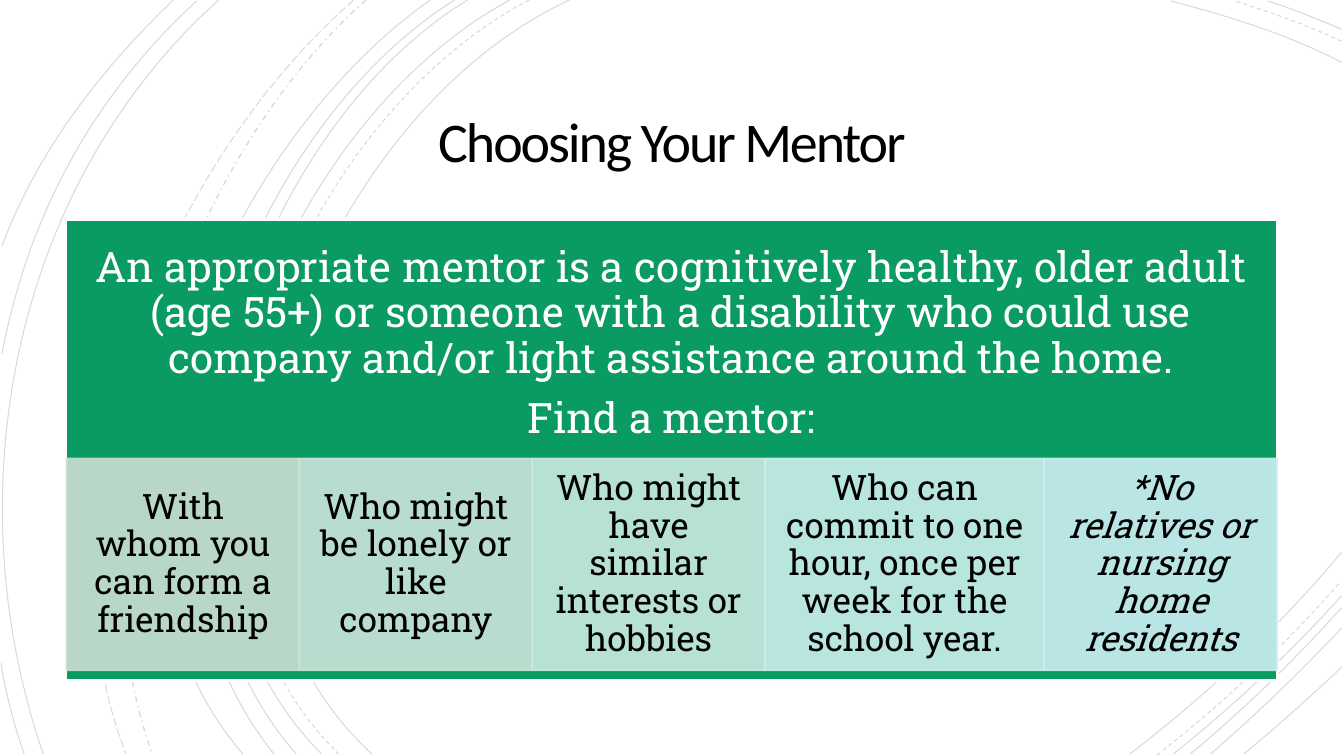
import pptx
import pptx.util
import pptx.dml.color
import pptx.enum.dml
import pptx.enum.shapes
import pptx.enum.text
import pptx.oxml
import pptx.oxml.ns

PX = 9144
SLAB = "Roboto Slab"
DASH = pptx.enum.dml.MSO_LINE
COLORS = {
    "ink": "000000",
    "paper": "FFFFFF",
    "panel": "099B62",
    "friendship": "CCDED3",
    "company": "CCE4D9",
    "interests": "CCE9E2",
    "commitment": "CCEEEC",
    "exclusion": "CDEEF3",
}
ARCS = [
    (DASH.SOLID, 0.75, [
        [(565, 0), (315, 115), (143, 540), (369, 748)],
        [(1331, 62), (1278, 34), (1218, 16), (1162, 1)],
        [(1121, 748), (1197, 690), (1269, 622), (1331, 548)],
        [(506, 0), (270, 127), (110, 537), (319, 748)],
        [(1331, 29), (1307, 19), (1283, 9), (1258, 1)],
        [(464, 0), (244, 133), (110, 541), (294, 748)],
        [(1164, 748), (1223, 701), (1280, 648), (1331, 591)],
        [(451, 0), (231, 138), (97, 533), (272, 748)],
        [(1181, 748), (1234, 704), (1284, 655), (1331, 603)],
        [(427, 0), (217, 147), (53, 529), (241, 748)],
        [(1201, 748), (1246, 709), (1290, 667), (1331, 623)],
        [(1234, 748), (1267, 721), (1299, 692), (1331, 662)],
        [(217, 0), (11, 185), (-46, 490), (43, 748)],
        [(195, 1), (92, 96), (28, 214), (2, 351)],
        [(1, 658), (6, 689), (14, 719), (24, 748)],
        [(172, 0), (100, 69), (37, 150), (2, 244)],
    ]),
    (DASH.DASH, 0.75, [
        [(525, 0), (285, 125), (123, 537), (336, 748)],
        [(1331, 41), (1297, 25), (1260, 12), (1225, 1)],
        [(1148, 749), (1213, 698), (1275, 640), (1330, 577)],
    ]),
    (DASH.DASH_DOT, 1, [[(363, 0), (176, 166), (65, 509), (151, 748)]]),
    (DASH.LONG_DASH, 0.75, [[(351, 0), (157, 169), (29, 499), (125, 748)]]),
]
MENTOR_TEXT = [
    "An appropriate mentor is a cognitively healthy, older adult (age 55+) "
    "or someone with a disability who could use company and/or light "
    "assistance around the home.",
    "Find a mentor:",
]
TILES = [
    ("friendship", 231, "With whom you can form a friendship", False),
    ("company", 231, "Who might be lonely or like company", False),
    ("interests", 231, "Who might have similar interests or hobbies", False),
    ("commitment", 277,
     "Who can commit to one hour, once per week for the school year.", False),
    ("exclusion", 231, "*No relatives or nursing home residents", True),
]


def px(*lengths):
    return [pptx.util.Emu(length * PX) for length in lengths]


def rgb(name):
    return pptx.dml.color.RGBColor.from_string(COLORS[name])


def drawing_element(tag, attributes=""):
    return pptx.oxml.parse_xml(
        f'<a:{tag} {pptx.oxml.ns.nsdecls("a")} {attributes}/>')


def paint(fill, name, opacity=100):
    fill.solid()
    fill.fore_color.rgb = rgb(name)
    if opacity < 100:
        color = fill._xPr.find(".//" + pptx.oxml.ns.qn("a:srgbClr"))
        color.append(drawing_element("alpha", f'val="{opacity * 1000}"'))


def bend(arc):
    segments = arc._element.findall(".//" + pptx.oxml.ns.qn("a:lnTo"))
    curve = drawing_element("cubicBezTo")
    segments[0].addprevious(curve)
    for segment in segments:
        curve.append(segment[0])
        segment.getparent().remove(segment)


def add_arc(page, corners, dash, width):
    builder = page.shapes.build_freeform(*corners[0], scale=PX)
    builder.add_line_segments(corners[1:], close=False)
    arc = builder.convert_to_shape()
    bend(arc)
    arc.shadow.inherit = False
    arc.fill.background()
    arc.line.width = pptx.util.Pt(width)
    paint(arc.line.fill, "ink", 15)
    arc.line.dash_style = dash


def add_rectangle(page, bounds, fill, line, width, opacity=100):
    box = page.shapes.add_shape(
        pptx.enum.shapes.MSO_SHAPE.RECTANGLE, *px(*bounds))
    box.shadow.inherit = False
    paint(box.fill, fill, opacity)
    box.line.width = pptx.util.Pt(width)
    paint(box.line.fill, line, opacity)
    return box


def write(box, texts, font, size, color, insets, spacing, italic=False):
    frame = box.text_frame
    frame.word_wrap = True
    frame.auto_size = pptx.enum.text.MSO_AUTO_SIZE.NONE
    frame.vertical_anchor = pptx.enum.text.MSO_ANCHOR.MIDDLE
    side, top = px(*insets)
    frame.margin_left = frame.margin_right = side
    frame.margin_top = frame.margin_bottom = top
    frame.text = "\n".join(texts)
    for para in frame.paragraphs:
        para.alignment = pptx.enum.text.PP_ALIGN.CENTER
        para.line_spacing = spacing
        para.font.name = font
        para.font.size = pptx.util.Pt(size)
        para.font.italic = italic
        para.font.color.rgb = rgb(color)
    return frame.paragraphs


def add_title(page, text):
    title = page.shapes.title
    title.left, title.top, title.width, title.height = px(192, 87, 949, 115)
    for para in write(title, [text], "Calibri", 40, "ink", (25, 25), 0.85):
        for span in para.runs:
            span._r.get_or_add_rPr().set("spc", "-150")


def space_after(paragraphs, points):
    for para in paragraphs:
        para.space_after = pptx.util.Pt(points)


def add_mentor_panel(page):
    add_rectangle(page, (65, 218, 1202, 457), "panel", "paper", 2)
    box = page.shapes.add_textbox(*px(65, 218, 1202, 247))
    space_after(write(box, MENTOR_TEXT, SLAB, 30, "paper", (23, 23), 0.9), 10.5)


def add_tiles(page):
    left = 66
    for color, width, text, italic in TILES:
        tile = add_rectangle(page, (left, 455, width, 210), color, color, 1.25, 90)
        space_after(
            write(tile, [text], SLAB, 25, "ink", (19, 3), 0.9, italic), 8.75)
        left += width


def main():
    deck = pptx.Presentation()
    deck.slide_height, = px(750)
    deck.slide_width = deck.slide_height * 16 // 9
    page = deck.slides.add_slide(deck.slide_layouts.get_by_name("Title Only"))
    paint(page.background.fill, "paper")
    for dash, width, curves in ARCS:
        for corners in curves:
            add_arc(page, corners, dash, width)
    add_title(page, "Choosing Your Mentor")
    add_mentor_panel(page)
    add_tiles(page)
    deck.save("out.pptx")


if __name__ == "__main__":
    main()
